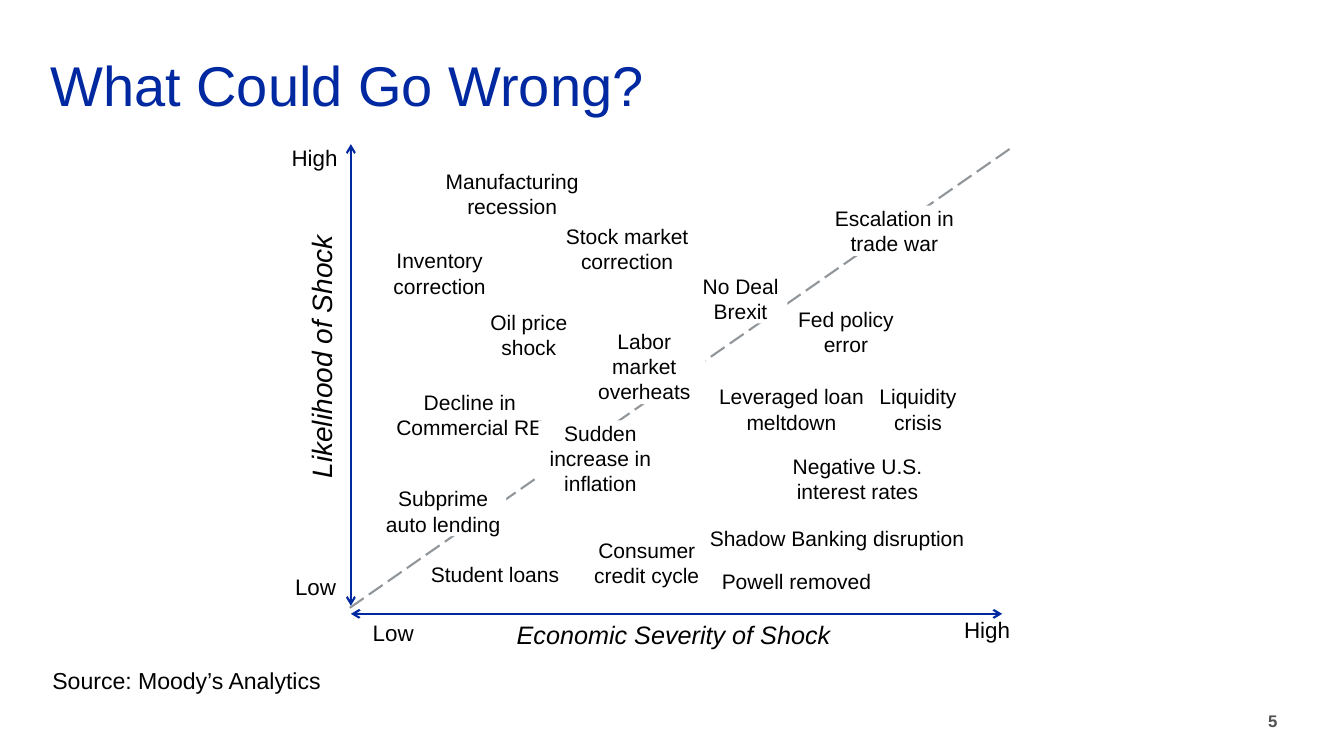
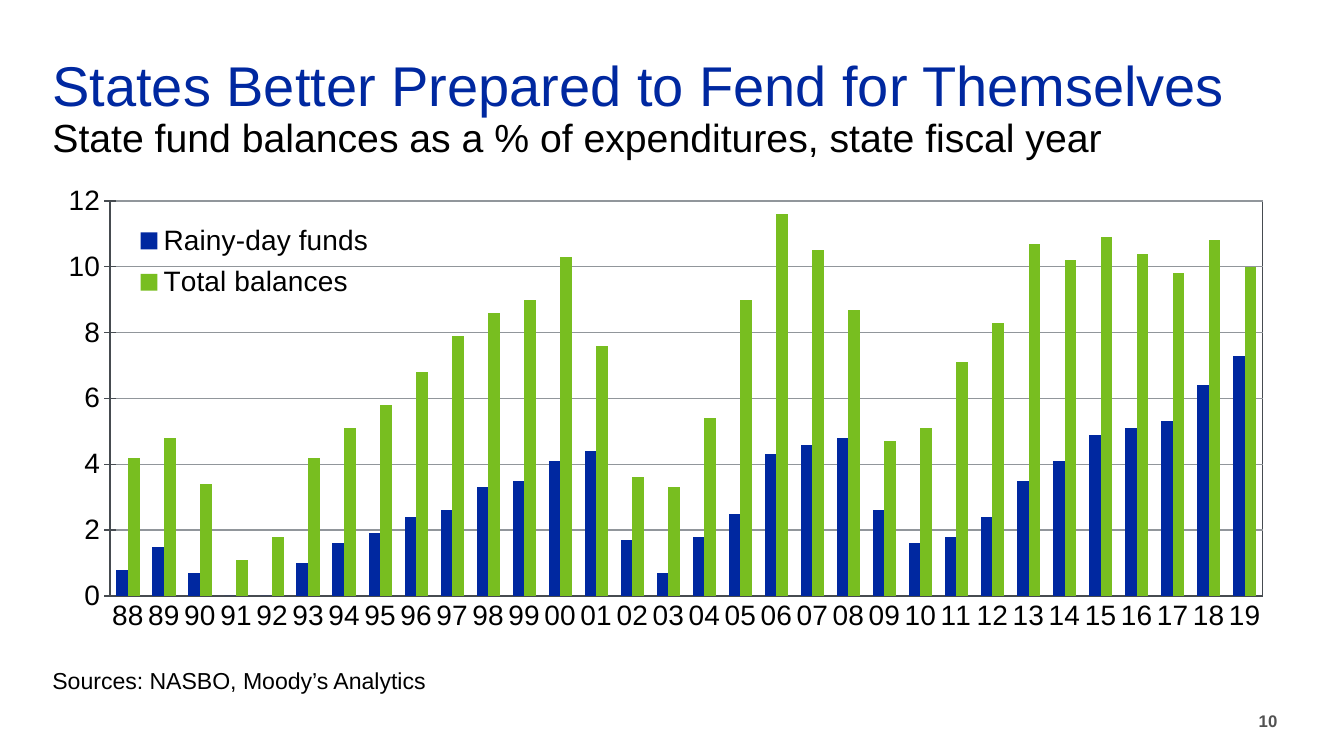
from lxml.etree import SubElement
from pptx import Presentation
from pptx.chart.data import CategoryChartData
from pptx.dml.color import RGBColor
from pptx.enum.chart import XL_CHART_TYPE, XL_LEGEND_POSITION, XL_TICK_MARK
from pptx.enum.dml import MSO_LINE
from pptx.enum.shapes import MSO_CONNECTOR
from pptx.enum.text import MSO_ANCHOR, MSO_AUTO_SIZE, PP_ALIGN
from pptx.oxml import parse_xml
from pptx.oxml.ns import nsdecls, qn
from pptx.util import Inches, Pt

FONT = "Arial"
HUES = {
    "blue": "0028A0",
    "green": "78BE20",
    "black": "000000",
    "white": "FFFFFF",
    "gray": "91969B",
    "slate": "464B50",
    "foot": "525252",
}
LEFT, MID, RIGHT = PP_ALIGN.LEFT, PP_ALIGN.CENTER, PP_ALIGN.RIGHT
ROW = 0.25

RISKS = [
    ("Student loans", 4.19, 5.57, 1.44, 1, False),
    ("Subprime auto lending", 3.77, 4.82, 1.25, 2, True),
    ("Escalation in trade war", 8.13, 2.04, 1.48, 2, True),
    ("Manufacturing recession", 4.07, 1.67, 2.02, 2, False),
    ("Inventory correction", 3.72, 2.46, 1.28, 2, False),
    ("Leveraged loan meltdown", 7.12, 3.81, 1.46, 2, False),
    ("Decline in Commercial RE", 3.9, 3.86, 1.52, 2, False),
    ("Oil price shock", 4.78, 3.07, 0.93, 2, True),
    ("Consumer credit cycle", 5.75, 5.33, 1.33, 2, False),
    ("Sudden increase in inflation", 5.34, 4.17, 1.23, 3, True),
    ("Stock market correction", 5.4, 2.22, 1.64, 2, False),
    ("No Deal Brexit", 6.88, 2.71, 0.93, 2, True),
    ("Shadow Banking disruption", 7.04, 5.21, 2.74, 1, True),
    ("Labor market overheats", 5.78, 3.26, 1.22, 3, True),
    ("Liquidity crisis", 8.64, 3.81, 0.93, 2, False),
    ("Fed policy error", 7.79, 3.04, 1.2, 2, False),
    ("Negative U.S. interest rates", 7.77, 4.5, 1.47, 2, False),
    ("Powell removed", 7.11, 5.64, 1.58, 1, False),
]
ENDS = [
    ("High", 2.7, 1.43),
    ("Low", 2.71, 5.69),
    ("Low", 3.48, 6.14),
    ("High", 9.37, 6.11),
]
YEARS = [f"{year % 100:02d}" for year in range(1988, 2020)]
FUNDS = [
    ("Rainy-day funds", "blue",
     [0.8, 1.5, 0.7, 0, 0, 1, 1.6, 1.9, 2.4, 2.6, 3.3, 3.5, 4.1, 4.4, 1.7, 0.7,
      1.8, 2.5, 4.3, 4.6, 4.8, 2.6, 1.6, 1.8, 2.4, 3.5, 4.1, 4.9, 5.1, 5.3, 6.4, 7.3]),
    ("Total balances", "green",
     [4.2, 4.8, 3.4, 1.1, 1.8, 4.2, 5.1, 5.8, 6.8, 7.9, 8.6, 9, 10.3, 7.6, 3.6, 3.3,
      5.4, 9, 11.6, 10.5, 8.7, 4.7, 5.1, 7.1, 8.3, 10.7, 10.2, 10.9, 10.4, 9.8, 10.8, 10]),
]


def hue(name):
    return RGBColor.from_string(HUES[name])


def place(shape, box):
    shape.left, shape.top, shape.width, shape.height = map(Inches, box)


def style(font, size, tint="black", bold=False, slant=False):
    font.name = FONT
    font.size = Pt(size)
    font.bold = bold
    font.italic = slant
    font.color.rgb = hue(tint)


def write(shape, text, size, tint="black", align=LEFT, anchor=MSO_ANCHOR.TOP,
          bold=False, slant=False):
    frame = shape.text_frame
    frame.word_wrap = True
    frame.auto_size = MSO_AUTO_SIZE.NONE
    frame.vertical_anchor = anchor
    frame.margin_left = frame.margin_right = 0
    frame.margin_top = frame.margin_bottom = 0
    frame.text = text
    line = frame.paragraphs[0]
    line.alignment = align
    style(line.runs[0].font, size, tint, bold, slant)


def label(slide, text, box, size, **look):
    shape = slide.shapes.add_textbox(*map(Inches, box))
    write(shape, text, size, **look)
    return shape


def rule(slide, start, end, tint, dash=None, arrows=False):
    line = slide.shapes.add_connector(
        MSO_CONNECTOR.STRAIGHT, *map(Inches, start + end))
    line.line.color.rgb = hue(tint)
    line.line.width = Pt(1.5)
    if dash:
        line.line.dash_style = dash
    if arrows:
        for tag in ("a:headEnd", "a:tailEnd"):
            SubElement(line.get_or_add_ln(), qn(tag), type="arrow")
    SubElement(line.element.spPr, qn("a:effectLst"))


def start(deck, title, left, width, source, number):
    slide = deck.slides.add_slide(deck.slide_layouts[5])
    place(slide.shapes.title, (left, 0.5, width, 0.67))
    write(slide.shapes.title, title, 40, "blue")
    label(slide, source, (0.52, 6.61, 10.94, 0.28), 16.5, anchor=MSO_ANCHOR.BOTTOM)
    page = label(slide, number, (12, 7, 0.67, 0.33), 12, tint="foot", align=RIGHT,
                 anchor=MSO_ANCHOR.MIDDLE, bold=True)
    page.text_frame.paragraphs[0].line_spacing = 0.9
    return slide


def layout(box, inner=False):
    target = '<c:layoutTarget val="inner"/>' if inner else ""
    modes = "".join(f'<c:{side}Mode val="edge"/>' for side in "xy")
    sizes = "".join(f'<c:{side} val="{part}"/>' for side, part in zip("xywh", box))
    return parse_xml(f'<c:layout {nsdecls("c")}><c:manualLayout>{target}{modes}'
                     f'{sizes}</c:manualLayout></c:layout>')


def border(tint):
    return parse_xml(f'<c:spPr {nsdecls("c", "a")}><a:noFill/><a:ln w="12700">'
                     f'<a:solidFill><a:srgbClr val="{HUES[tint]}"/></a:solidFill>'
                     '</a:ln></c:spPr>')


def stroke(line, tint):
    line.color.rgb = hue(tint)
    line.width = Pt(1)


def bars(slide, box):
    data = CategoryChartData(number_format="0.0")
    data.categories = YEARS
    for name, _, vals in FUNDS:
        data.add_series(name, vals)
    chart = slide.shapes.add_chart(
        XL_CHART_TYPE.COLUMN_CLUSTERED, *map(Inches, box), data).chart
    chart.has_title = False
    style(chart.font, 20)

    plot = chart.plots[0]
    plot.gap_width = 110
    plot.overlap = 0
    plot.vary_by_categories = False
    for series, (_, tint, _) in zip(plot.series, FUNDS):
        series.format.fill.solid()
        series.format.fill.fore_color.rgb = hue(tint)

    years, scale = chart.category_axis, chart.value_axis
    for axis in (years, scale):
        style(axis.tick_labels.font, 20)
        stroke(axis.format.line, "slate")
        axis.minor_tick_mark = XL_TICK_MARK.NONE
    years.major_tick_mark = XL_TICK_MARK.NONE
    scale.major_tick_mark = XL_TICK_MARK.CROSS
    scale.minimum_scale, scale.maximum_scale, scale.major_unit = 0, 12, 2
    scale.tick_labels.number_format = "#,##0"
    scale.tick_labels.number_format_is_linked = False
    stroke(scale.major_gridlines.format.line, "gray")

    chart.has_legend = True
    chart.legend.position = XL_LEGEND_POSITION.RIGHT
    chart.legend.include_in_layout = False
    style(chart.legend.font, 20)

    root = chart.element
    for old in root.xpath(".//c:plotArea/c:layout | .//c:legend/c:layout"):
        old.getparent().remove(old)
    area = root.xpath(".//c:plotArea")[0]
    area.insert(0, layout((0.047, 0.071, 0.941, 0.808), True))
    area.append(border("slate"))
    root.xpath(".//c:legendPos")[0].addnext(layout((0.06, 0.1, 0.21, 0.19)))


def shocks(deck):
    slide = start(deck, "What Could Go Wrong?", 0.5, 11.92,
                  "Source: Moody’s Analytics", "5")
    rule(slide, (3.48, 1.43), (3.48, 6.01), "blue", arrows=True)
    rule(slide, (3.48, 6.09), (9.94, 6.09), "blue", arrows=True)
    rule(slide, (3.47, 6.03), (10.04, 1.46), "gray", dash=MSO_LINE.LONG_DASH)
    for text, left, top in ENDS:
        label(slide, text, (left, top, 0.84, 0.27), 16, align=MID)
    side = label(slide, "Likelihood of Shock", (1.94, 3.37, 2.49, 0.34), 20,
                 align=MID, slant=True)
    side.rotation = 270
    label(slide, "Economic Severity of Shock", (4.72, 6.14, 3.92, 0.3), 18,
          align=MID, slant=True)
    for text, left, top, width, rows, solid in RISKS:
        align = LEFT if text.startswith("Shadow") else MID
        risk = label(slide, text, (left, top, width, rows * ROW), 15, align=align)
        if solid:
            risk.fill.solid()
            risk.fill.fore_color.rgb = hue("white")


def states(deck):
    slide = start(deck, "States Better Prepared to Fend for Themselves", 0.52, 12.3,
                  "Sources: NASBO, Moody’s Analytics", "10")
    bars(slide, (0.52, 1.65, 12.15, 4.85))
    label(slide, "State fund balances as a % of expenditures, state fiscal year",
          (0.52, 1.12, 11.75, 0.53), 28)


def main():
    deck = Presentation()
    deck.slide_width, deck.slide_height = Inches(13.33), Inches(7.5)
    shocks(deck)
    states(deck)
    deck.save("out.pptx")


if __name__ == "__main__":
    main()
